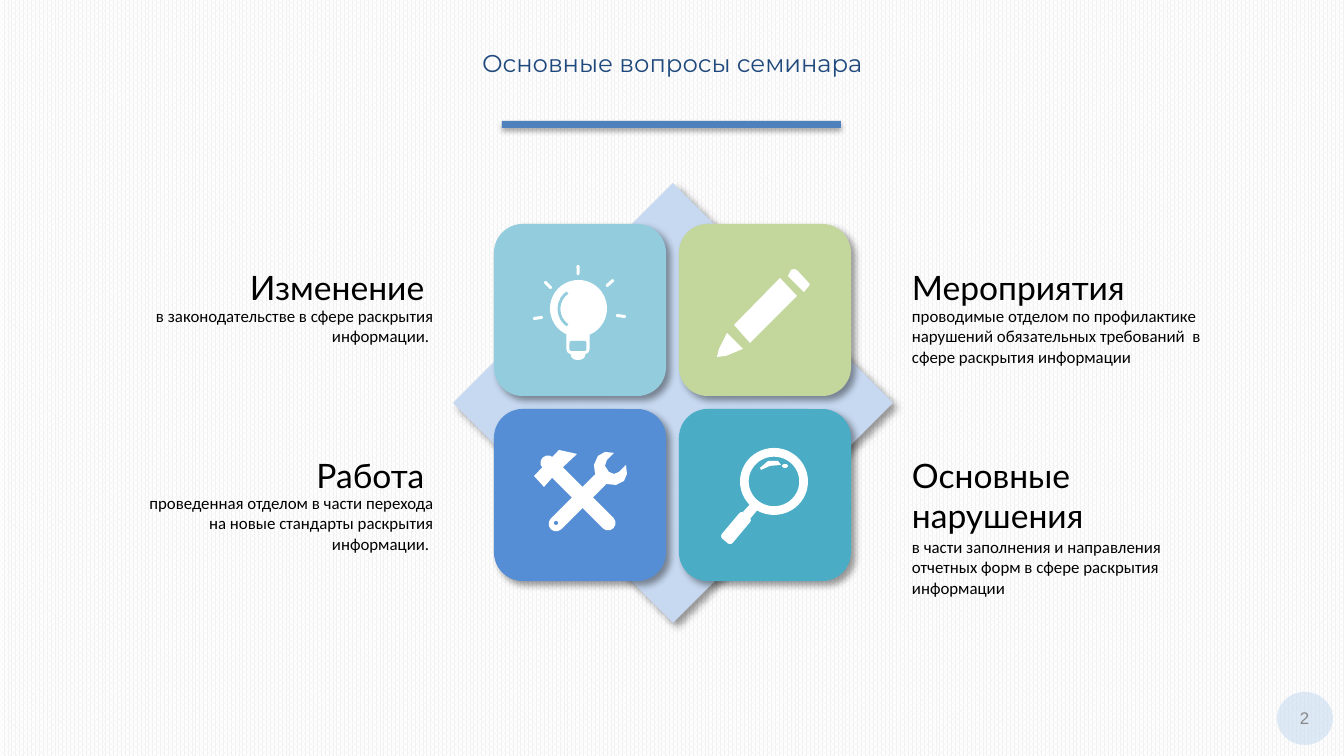
from lxml import etree
from pptx import Presentation, util as u
from pptx.dml.color import RGBColor
from pptx.enum import dml, shapes, text
from pptx.oxml.ns import qn

PX = 9144000 / 1344
MSO = shapes.MSO_SHAPE
C = {
    "white": "FFFFFF", "weave": "F2F2F2", "pale": "C6D9F1", "sky": "93CDDD",
    "green": "C3D69B", "blue": "558ED5", "teal": "4BACC6", "bar": "4F81BD",
    "title": "1F497D", "black": "000000", "gray": "888888",
}
TILE_SHADOW = (4, 3, 45, 40)
BAR_SHADOW = (3.1, 1.8, 90, 35)

prs = Presentation()
prs.slide_width, prs.slide_height = int(1344 * PX), int(756 * PX)
s = prs.slides.add_slide(prs.slide_layouts[5])
bg = s.background.fill
bg.patterned()
bg.pattern = dml.MSO_PATTERN.PERCENT_80
bg.fore_color.rgb = RGBColor.from_string(C["weave"])
bg.back_color.rgb = RGBColor.from_string(C["white"])


def add_shape(kind, x, y, w, h, color="white", rot=0, shadow=None):
    sp = s.shapes.add_shape(kind, *(int(v * PX) for v in (x, y, w, h)))
    sp.rotation = rot
    sp.fill.solid()
    sp.fill.fore_color.rgb = RGBColor.from_string(C[color])
    sp.line.fill.background()
    sp.shadow.inherit = False
    if shadow:
        blur, dist, angle, alpha = shadow
        effects = sp._element.spPr.find(qn("a:effectLst"))
        outer = etree.SubElement(
            effects, qn("a:outerShdw"), blurRad=str(int(blur * 12700)),
            dist=str(int(dist * 12700)), dir=str(angle * 60000),
            algn="bl", rotWithShape="0")
        clr = etree.SubElement(outer, qn("a:srgbClr"), val=C["black"])
        etree.SubElement(clr, qn("a:alpha"), val=str(alpha * 1000))
    return sp


def add_outline(points):
    fb = s.shapes.build_freeform(*points[0], scale=PX)
    fb.add_line_segments(points[1:], close=True)
    sp = fb.convert_to_shape()
    sp.fill.solid()
    sp.fill.fore_color.rgb = RGBColor.from_string(C["white"])
    sp.line.fill.background()
    sp.shadow.inherit = False


add_shape(MSO.DIAMOND, 453, 183, 440, 440, "pale", shadow=TILE_SHADOW)
for i, color in enumerate(("sky", "green", "blue", "teal")):
    add_shape(MSO.ROUNDED_RECTANGLE, 494 + i % 2 * 185, 224 + i // 2 * 185,
              172, 172, color, shadow=TILE_SHADOW)

add_shape(MSO.OVAL, 550, 280, 57, 57)
rounded_bars = [
    (578, 270, 10, 3, 90, 0.5, "white"),
    (548, 285, 10, 3, 45, 0.5, "white"),
    (538, 318, 10, 3, -8, 0.5, "white"),
    (621, 316, 10, 3, 8, 0.5, "white"),
    (610, 283, 10, 3, -42, 0.5, "white"),
    (578, 342, 23, 24, 0, 0.2, "white"),
    (578, 352, 15, 16, 0, 0.4, "white"),
    (578, 346, 17, 10, 0, 0.2, "sky"),
    (578, 493, 100, 15, 45, 0.5, "white"),
    (578, 502, 77, 15, -45, 0.5, "white"),
    (736, 528, 34, 14, -50, 0.25, "white"),
]
for cx, cy, w, h, rot, radius, color in rounded_bars:
    sp = add_shape(MSO.ROUNDED_RECTANGLE, cx - w / 2, cy - h / 2, w, h, color, rot)
    sp.adjustments[0] = radius

glint = add_shape(MSO.ARC, 559, 289, 40, 40)
glint.fill.background()
glint.line.color.rgb = RGBColor.from_string(C["sky"])
glint.line.width = u.Pt(1.5)
glint.adjustments[0], glint.adjustments[1] = 75, 141

add_shape(MSO.OVAL, 554, 521, 4, 4, "blue")
lens = add_shape(MSO.DONUT, 740, 448, 68, 67)
lens.adjustments[0] = 0.13
add_shape(MSO.OVAL, 782, 464, 6, 4)

wrench_jaw = [(624, 481), (627, 474), (626, 465), (619, 472), (614, 474), (609, 472),
              (605, 466), (607, 460), (614, 453), (605, 452), (598, 456), (594, 465),
              (595, 473), (599, 480), (606, 484), (616, 485)]
hammer_head = [(577, 454), (559, 450), (534, 476), (544, 487), (552, 478), (560, 470)]
lens_neck = [(750, 519), (743, 512), (753, 501), (760, 507)]
lens_glint = [(781, 465), (770, 466), (761, 470), (760, 468), (768, 461), (778, 461)]
pencil_tip = [(727, 333), (719, 349), (717, 357), (726, 356), (743, 349)]
pencil_body = [(780, 278), (734, 325), (750, 343), (797, 296)]
pencil_end = [(808, 282), (797, 270), (794, 269), (791, 270), (788, 276), (804, 292),
              (809, 286), (810, 284)]
for points in (wrench_jaw, hammer_head, lens_neck, lens_glint,
               pencil_tip, pencil_body, pencil_end):
    add_outline(points)

add_shape(MSO.RECTANGLE, 502, 121, 339, 7, "bar", shadow=BAR_SHADOW)
badge = add_shape(MSO.OVAL, 1277, 692, 56, 53, "pale")
clr = badge._element.spPr.find(qn("a:solidFill"))[0]
etree.SubElement(clr, qn("a:alpha"), val="55000")

LEFT, RIGHT, CENTER = text.PP_ALIGN.LEFT, text.PP_ALIGN.RIGHT, text.PP_ALIGN.CENTER
HEAD, BODY = ("Lato", 18, "black"), ("Calibri", 9, "black")
labels = [
    (134, 262, 309, 51, "Изменение ", RIGHT, HEAD),
    (134, 301, 309, 51, "в законодательстве в сфере раскрытия информации. ", RIGHT, BODY),
    (134, 450, 309, 51, "Работа ", RIGHT, HEAD),
    (134, 488, 309, 71, "проведенная отделом в части перехода на новые стандарты "
     "раскрытия информации. ", RIGHT, BODY),
    (902, 262, 309, 51, "Мероприятия", LEFT, HEAD),
    (902, 301, 309, 71, "проводимые отделом по профилактике нарушений обязательных "
     "требований  в сфере раскрытия информации", LEFT, BODY),
    (902, 450, 309, 91, "Основные нарушения", LEFT, HEAD),
    (902, 532, 309, 71, "в части заполнения и направления отчетных форм в сфере "
     "раскрытия информации", LEFT, BODY),
    (269, 31, 806, 44, "Основные вопросы семинара", CENTER, ("Montserrat", 13, "title")),
    (1281, 695, 47, 46, "2", CENTER, ("Arial", 9, "gray")),
]
for x, y, w, h, words, align, (font, size, color) in labels:
    is_title = color == "title"
    sp = s.shapes.title if is_title else s.shapes.add_textbox(0, 0, 0, 0)
    sp.left, sp.top, sp.width, sp.height = (int(v * PX) for v in (x, y, w, h))
    tf = sp.text_frame
    tf.word_wrap = True
    tf.auto_size = text.MSO_AUTO_SIZE.NONE
    tf.vertical_anchor = text.MSO_ANCHOR.MIDDLE if words == "2" else text.MSO_ANCHOR.TOP
    tf.margin_left = tf.margin_right = int((5 if is_title else 10) * PX)
    tf.margin_top = tf.margin_bottom = int((3 if is_title else 5) * PX)
    p = tf.paragraphs[0]
    p.text = words
    p.alignment = align
    p.font.name, p.font.size = font, u.Pt(size)
    p.font.color.rgb = RGBColor.from_string(C[color])
    if is_title:
        p.line_spacing = 1.5

prs.save("out.pptx")
